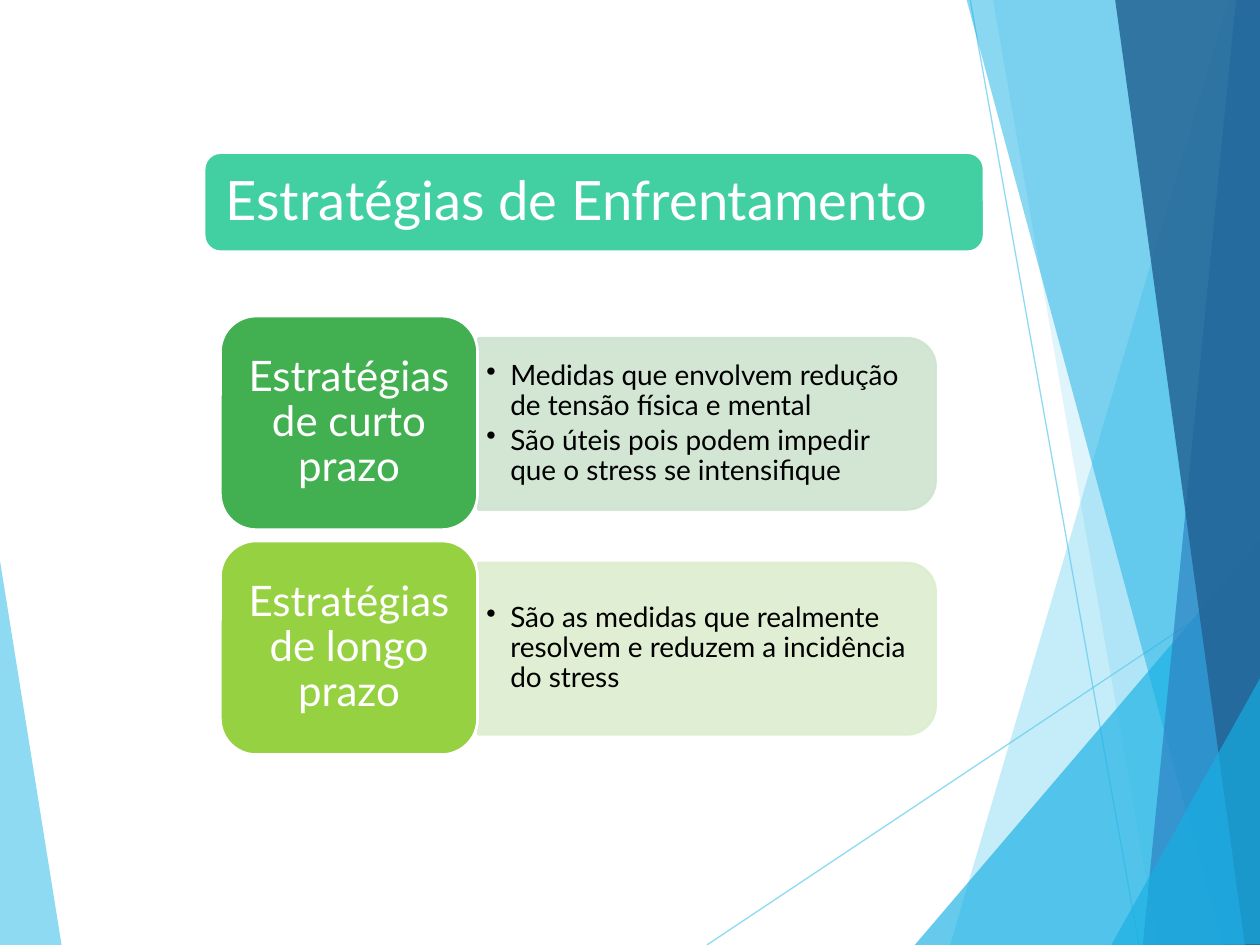
from typing import NamedTuple

from lxml import etree
from pptx import Presentation
from pptx.dml.color import RGBColor
from pptx.enum.shapes import MSO_CONNECTOR, MSO_SHAPE
from pptx.enum.text import MSO_ANCHOR, MSO_AUTO_SIZE, PP_ALIGN
from pptx.oxml.ns import qn
from pptx.util import Emu, Inches, Pt

ROUNDED, HALF_ROUNDED = MSO_SHAPE.ROUNDED_RECTANGLE, MSO_SHAPE.ROUND_2_SAME_RECTANGLE
STRAIGHT = MSO_CONNECTOR.STRAIGHT
MIDDLE, NO_FIT = MSO_ANCHOR.MIDDLE, MSO_AUTO_SIZE.NONE
LEFT, CENTER = PP_ALIGN.LEFT, PP_ALIGN.CENTER
SLIDE_WIDTH, SLIDE_HEIGHT = Inches(10), Inches(7.5)
FONT, WHITE, BLACK = "Lato", "FFFFFF", "000000"
SKY, CYAN, BLUE, NAVY = "5FCBEF", "17B0E4", "2E83C3", "226292"
FIRST_ROW, ROW_PITCH = 33.45, 23.8


class Box(NamedTuple):
    left: float
    top: float
    width: float
    height: float


class Facet(NamedTuple):
    color: str
    opacity: int
    points: list


class Strategy(NamedTuple):
    label: str
    color: str
    tint: str
    measures: list


class TextStyle(NamedTuple):
    size: int
    color: str
    align: int
    margins: tuple
    space_after: float = 0
    bulleted: bool = False


BACK_FACETS = [Facet(SKY, 70, [(-0.1, 58.5), (4.9, 100.1), (-0.1, 100)])]
RAYS = [((56.1, 100), (100.1, 60.9)), ((77, 0), (90.4, 100))]
FRONT_FACETS = [
    Facet(SKY, 36, [(97.5, 0), (75.4, 100), (100.2, 100.1), (100.1, 0.1)]),
    Facet(SKY, 20, [(78.8, -0.1), (91.9, 100), (100.1, 100), (100.1, -0.1)]),
    Facet(CYAN, 66, [(72.6, 100), (100, 57.2), (100.1, 100)]),
    Facet(CYAN, 50, [(76.7, -0.1), (97, 100), (100.1, 99.9), (100.1, -0.1)]),
    Facet(BLUE, 70, [(98.1, -0.1), (90.7, 100), (100.1, 100), (100, -0.1)]),
    Facet(NAVY, 82, [(88.5, -0.1), (98.8, 100), (100.2, 100), (100, -0.1)]),
    Facet(CYAN, 66, [(88.2, 100), (100.2, 71.3), (100.2, 99.9)]),
]
STRATEGIES = [
    Strategy("Estratégias de curto prazo", "42B051", "CFE4D0", [
        "Medidas que envolvem redução de tensão física e mental",
        "São úteis pois podem impedir que o stress se intensifique"]),
    Strategy("Estratégias de longo prazo", "96D141", "DDEECF", [
        "São as medidas que realmente resolvem e reduzem a incidência do stress"]),
]
TITLE_STYLE = TextStyle(31, WHITE, LEFT, (0.13, 0.13))
LABEL_STYLE = TextStyle(24, WHITE, CENTER, (0.1, 0.05))
MEASURE_STYLE = TextStyle(16, BLACK, LEFT, (0.07, 0.03), 2.4, True)


def across(percent: float) -> Emu:
    """Turn a percentage of the slide width into a length."""
    return Emu(round(SLIDE_WIDTH * percent / 100))


def down(percent: float) -> Emu:
    """Turn a percentage of the slide height into a length."""
    return Emu(round(SLIDE_HEIGHT * percent / 100))


def apply(target, values: dict) -> None:
    """Set each named attribute on the target."""
    for name, value in values.items():
        setattr(target, name, value)


def place(shape, box: Box) -> None:
    """Move and size a shape by shares of the slide."""
    apply(shape, {"left": across(box.left), "top": down(box.top),
                  "width": across(box.width), "height": down(box.height)})


def paint(fill, color: str, opacity: int = 100) -> None:
    """Give a fill a solid colour with an opacity in percent."""
    fill.solid()
    fill.fore_color.rgb = RGBColor.from_string(color)
    if opacity < 100:
        tone = fill._xPr.find(".//" + qn("a:srgbClr"))
        etree.SubElement(tone, qn("a:alpha"), val=str(opacity * 1000))


def write(frame, paragraphs: list, style: TextStyle) -> None:
    """Write styled paragraphs into a text frame."""
    side, edge = map(Inches, style.margins)
    apply(frame, {"word_wrap": True, "auto_size": NO_FIT, "vertical_anchor": MIDDLE,
                  "margin_left": side, "margin_right": side,
                  "margin_top": edge, "margin_bottom": edge})
    for index, words in enumerate(paragraphs):
        paragraph = frame.add_paragraph() if index else frame.paragraphs[0]
        apply(paragraph, {"alignment": style.align, "line_spacing": 0.9,
                          "space_before": Pt(0), "space_after": Pt(style.space_after)})
        run = paragraph.add_run()
        run.text = words
        apply(run.font, {"name": FONT, "size": Pt(style.size)})
        paint(run.font.fill, style.color)
        if style.bulleted:
            properties = paragraph._p.get_or_add_pPr()
            properties.set("marL", str(Inches(0.19)))
            properties.set("indent", str(-Inches(0.19)))
            etree.SubElement(properties, qn("a:buChar"), char="•")


def draw_facet(slide, facet: Facet) -> None:
    """Draw one translucent facet of the backdrop."""
    corners = [(across(x), down(y)) for x, y in facet.points]
    builder = slide.shapes.build_freeform(*corners[0])
    builder.add_line_segments(corners[1:], close=True)
    shape = builder.convert_to_shape()
    shape.shadow.inherit = False
    paint(shape.fill, facet.color, facet.opacity)
    shape.line.fill.background()


def draw_ray(slide, start: tuple, end: tuple) -> None:
    """Draw one thin line of the backdrop."""
    ray = slide.shapes.add_connector(
        STRAIGHT, across(start[0]), down(start[1]), across(end[0]), down(end[1]))
    paint(ray.line.fill, SKY, 70)
    ray.line.width = Pt(0.75)
    etree.SubElement(ray._element.spPr, qn("a:effectLst"))


def draw_card(slide, kind: int, box: Box, color: str, outline: str, opacity: int = 100):
    """Draw a filled and outlined card."""
    card = slide.shapes.add_shape(kind, 0, 0, 0, 0)
    place(card, box)
    card.shadow.inherit = False
    paint(card.fill, color, opacity)
    paint(card.line.fill, outline, opacity)
    card.line.width = Pt(1.5)
    return card


def draw_strategy(slide, strategy: Strategy, row: int) -> None:
    """Draw one row: a panel of measures and its label."""
    top = FIRST_ROW + row * ROW_PITCH
    panel = draw_card(slide, HALF_ROUNDED, Box(49.3, top - 12.8, 13.6, 48.4),
                      strategy.tint, strategy.tint, 90)
    panel.rotation = 90
    measures = slide.shapes.add_textbox(0, 0, 0, 0)
    place(measures, Box(37.9, top + 3.2, 35.6, 16.4))
    write(measures.text_frame, strategy.measures, MEASURE_STYLE)
    label = draw_card(slide, ROUNDED, Box(17.5, top, 20.4, 22.6), strategy.color, WHITE)
    write(label.text_frame, [strategy.label], LABEL_STYLE)


def main() -> None:
    """Build the slide and save it."""
    deck = Presentation()
    apply(deck, {"slide_width": SLIDE_WIDTH, "slide_height": SLIDE_HEIGHT})
    slide = deck.slides.add_slide(deck.slide_layouts[5])
    for facet in BACK_FACETS:
        draw_facet(slide, facet)
    for start, end in RAYS:
        draw_ray(slide, start, end)
    for facet in FRONT_FACETS:
        draw_facet(slide, facet)
    banner = draw_card(slide, ROUNDED, Box(16.2, 16.15, 61.9, 10.5), "42D0A2", WHITE)
    title = slide.shapes.title
    place(title, Box(16.6, 16.65, 61.1, 9.6))
    write(title.text_frame, ["Estratégias de Enfrentamento"], TITLE_STYLE)
    banner._element.addnext(title._element)
    for row, strategy in enumerate(STRATEGIES):
        draw_strategy(slide, strategy, row)
    deck.save("out.pptx")


if __name__ == "__main__":
    main()
